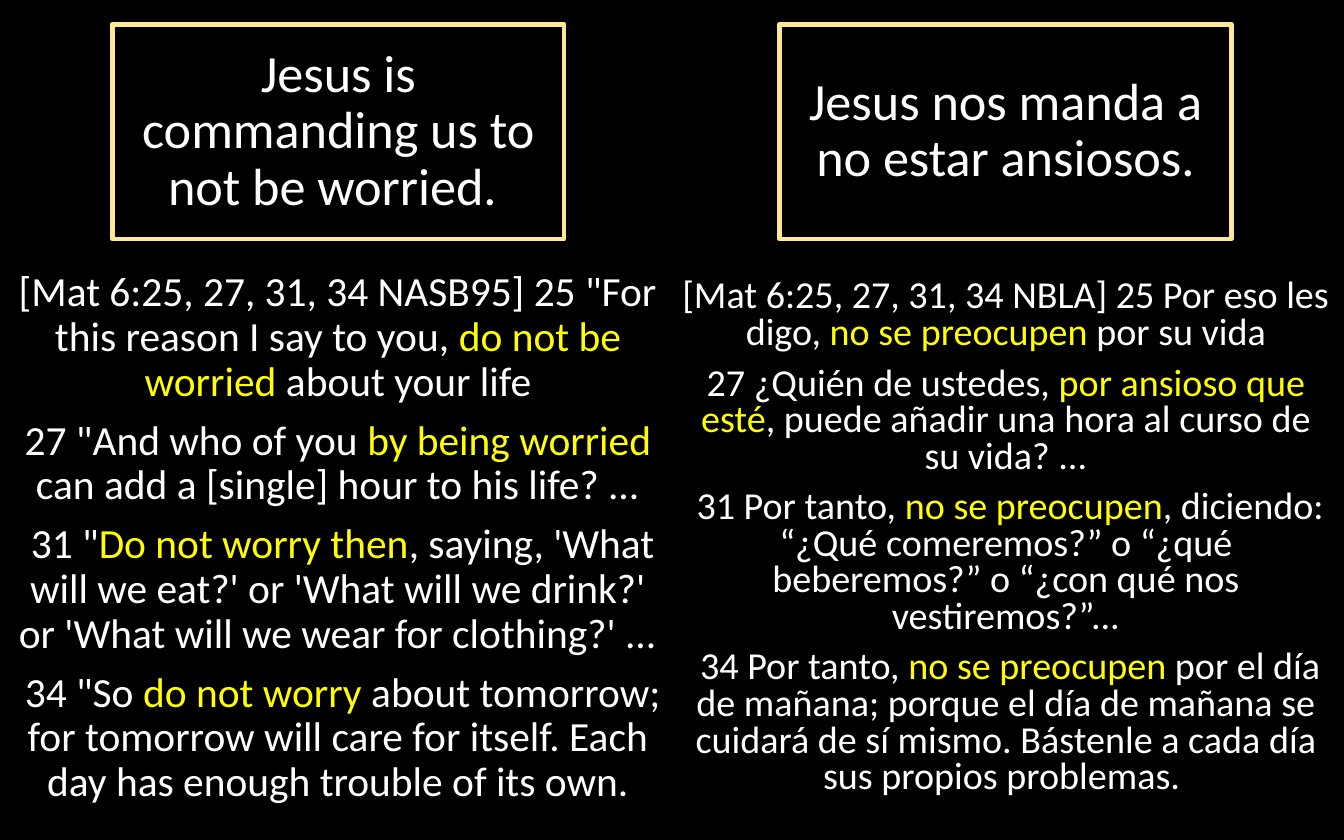
from dataclasses import dataclass

import pptx
import pptx.dml.color
import pptx.enum.shapes
import pptx.enum.text
import pptx.util

Pt = pptx.util.Pt
RGB = pptx.dml.color.RGBColor


@dataclass(frozen=True)
class Theme:
    font: str = "Calibri"
    background: RGB = RGB(0x00, 0x00, 0x00)
    text: RGB = RGB(0xFF, 0xFF, 0xFF)
    highlight: RGB = RGB(0xFF, 0xFF, 0x00)
    frame: RGB = RGB(0xFF, 0xE6, 0x99)
    title_size: float = 28
    title_spacing: float = 0.9
    verse_gap: float = 7.5


@dataclass(frozen=True)
class Column:
    title_left: float
    verses_left: float
    verse_size: float
    verse_spacing: float
    title: str
    verses: tuple[str, ...]  # bars enclose the highlighted words


THEME = Theme()
PAGE_WIDTH, PAGE_HEIGHT = 720, 450
TITLE_TOP, TITLE_WIDTH, TITLE_HEIGHT = 13, 242, 115
VERSES_TOP, VERSES_WIDTH, VERSES_HEIGHT = 139.7, 357.8, 297.4

COLUMNS = (
    Column(
        60.2, 2.2, 22.2, 0.9,
        "Jesus is commanding us to not be worried. ",
        (
            '[Mat 6:25, 27, 31, 34 NASB95] 25 "For this reason I say to you, '
            "|do not be worried |about your life",
            '27 "And who of you |by being worried| can add a [single] hour '
            "to his life? ...",
            " 31 \"|Do not worry then|, saying, 'What will we eat?' or 'What "
            "will we drink?' or 'What will we wear for clothing?' ...",
            ' 34 "So |do not worry| about tomorrow; for tomorrow will care '
            "for itself. Each day has enough trouble of its own.",
        ),
    ),
    Column(
        417.6, 360, 20.4, 0.8,
        "Jesus nos manda a no estar ansiosos.",
        (
            "[Mat 6:25, 27, 31, 34 NBLA] 25 Por eso les digo, "
            "|no se preocupen |por su vida",
            "27 ¿Quién de ustedes, |por ansioso que esté|, puede añadir una "
            "hora al curso de su vida? ...",
            " 31 Por tanto, |no se preocupen|, diciendo: “¿Qué comeremos?” o "
            "“¿qué beberemos?” o “¿con qué nos vestiremos?”...",
            " 34 Por tanto, |no se preocupen |por el día de mañana; porque el "
            "día de mañana se cuidará de sí mismo. Bástenle a cada día sus "
            "propios problemas. ",
        ),
    ),
)


def write_text(box, paragraphs: tuple[str, ...], *, size: float,
               spacing: float, gap: float = 0) -> None:
    """Fill a box with centred text, colouring the words between bars."""
    frame = box.text_frame
    frame.word_wrap = True
    frame.vertical_anchor = pptx.enum.text.MSO_ANCHOR.MIDDLE
    frame.margin_left = frame.margin_right = Pt(5)
    frame.margin_top = frame.margin_bottom = Pt(3)
    for number, text in enumerate(paragraphs):
        para = frame.add_paragraph() if number else frame.paragraphs[0]
        para.alignment = pptx.enum.text.PP_ALIGN.CENTER
        para.line_spacing = spacing
        para.space_before = Pt(gap if number else 0)
        for position, words in enumerate(text.split("|")):
            span = para.add_run()
            span.text = words
            span.font.name = THEME.font
            span.font.size = Pt(size)
            span.font.color.rgb = THEME.highlight if position % 2 else THEME.text


def draw_title(page, column: Column) -> None:
    box = page.shapes.add_shape(
        pptx.enum.shapes.MSO_SHAPE.RECTANGLE, Pt(column.title_left),
        Pt(TITLE_TOP), Pt(TITLE_WIDTH), Pt(TITLE_HEIGHT))
    box.shadow.inherit = False
    box.fill.background()
    box.line.color.rgb = THEME.frame
    box.line.width = Pt(2.5)
    write_text(box, (column.title,), size=THEME.title_size,
               spacing=THEME.title_spacing)


def draw_verses(page, column: Column) -> None:
    box = page.shapes.add_textbox(
        Pt(column.verses_left), Pt(VERSES_TOP),
        Pt(VERSES_WIDTH), Pt(VERSES_HEIGHT))
    write_text(box, column.verses, size=column.verse_size,
               spacing=column.verse_spacing, gap=THEME.verse_gap)


def main() -> None:
    deck = pptx.Presentation()
    deck.slide_width, deck.slide_height = Pt(PAGE_WIDTH), Pt(PAGE_HEIGHT)
    page = deck.slides.add_slide(deck.slide_layouts[6])
    page.background.fill.solid()
    page.background.fill.fore_color.rgb = THEME.background
    for column in COLUMNS:
        draw_verses(page, column)
        draw_title(page, column)
    deck.save("out.pptx")


if __name__ == "__main__":
    main()
